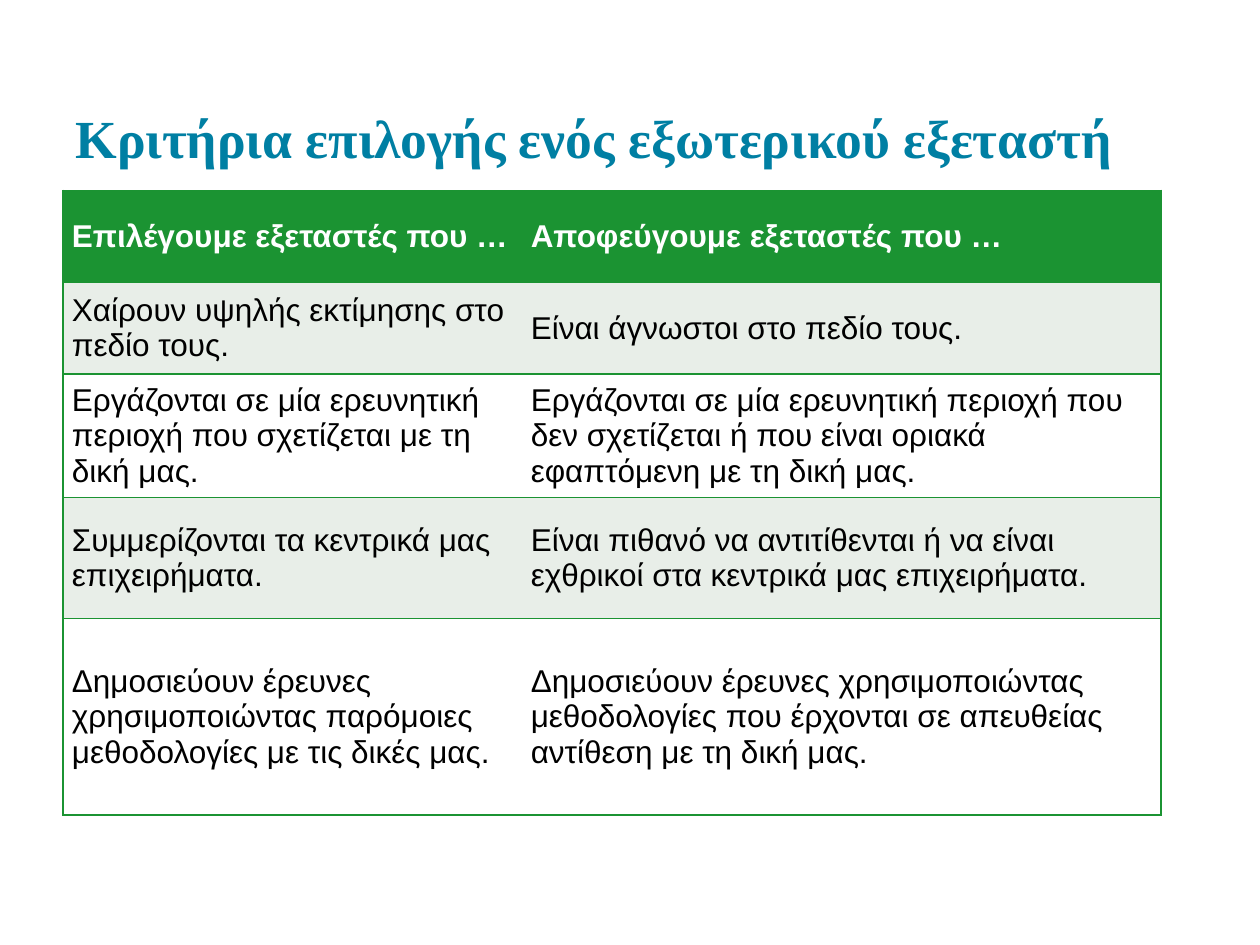
from lxml import etree
from pptx import Presentation
from pptx.dml.color import RGBColor
from pptx.enum.text import MSO_ANCHOR, MSO_AUTO_SIZE, PP_ALIGN
from pptx.oxml.ns import qn
from pptx.util import Cm, Pt

MIDDLE, BOTTOM = MSO_ANCHOR.MIDDLE, MSO_ANCHOR.BOTTOM
LEFT = PP_ALIGN.LEFT
NO_FIT = MSO_AUTO_SIZE.NONE
TITLE_ONLY = 5

GREEN, PALE, WHITE, BLACK, TEAL = "1B9332", "E8EEE8", "FFFFFF", "000000", "007FA3"
COLUMN_WIDTHS = [9.25, 12.88]
ROW_HEIGHTS = [1.85, 1.85, 2.49, 2.44, 3.96]
CRITERIA = [
    ("Επιλέγουμε εξεταστές που …", "Αποφεύγουμε εξεταστές που …"),
    ("Χαίρουν υψηλής εκτίμησης στο πεδίο τους.", "Είναι άγνωστοι στο πεδίο τους."),
    ("Εργάζονται σε μία ερευνητική περιοχή που σχετίζεται με τη δική μας.",
     "Εργάζονται σε μία ερευνητική περιοχή που δεν σχετίζεται ή που είναι οριακά "
     "εφαπτόμενη με τη δική μας."),
    ("Συμμερίζονται τα κεντρικά μας επιχειρήματα.",
     "Είναι πιθανό να αντιτίθενται ή να είναι εχθρικοί στα κεντρικά μας επιχειρήματα."),
    ("Δημοσιεύουν έρευνες χρησιμοποιώντας παρόμοιες μεθοδολογίες με τις δικές μας.",
     "Δημοσιεύουν έρευνες χρησιμοποιώντας μεθοδολογίες που έρχονται σε απευθείας "
     "αντίθεση με τη δική μας."),
]


def color(value):
    return RGBColor.from_string(value)


def apply(target, values):
    for name, value in values.items():
        setattr(target, name, value)


class SlideWriter:
    """Holds the style and the current slide and writes its elements."""

    def __init__(self, page):
        self.page = page
        self.title_font = {"name": "Times New Roman", "size": Pt(30.6), "bold": True}
        self.cell_font = {"name": "Arial", "size": Pt(18)}
        self.cell_format = {"vertical_anchor": MIDDLE, "margin_left": Cm(0.18),
                            "margin_right": Cm(0.18), "margin_top": 0, "margin_bottom": 0}

    def title(self, text, left, top, width, height):
        box = self.page.shapes.title
        apply(box, {"left": Cm(left), "top": Cm(top), "width": Cm(width), "height": Cm(height)})
        frame = box.text_frame
        sides = ("margin_left", "margin_top", "margin_right", "margin_bottom")
        apply(frame, {"text": text, "auto_size": NO_FIT, "word_wrap": True,
                      "vertical_anchor": BOTTOM} | dict.fromkeys(sides, Cm(0.25)))
        para = frame.paragraphs[0]
        para.alignment = LEFT
        span = para.runs[0]
        apply(span.font, self.title_font)
        span.font.color.rgb = color(TEAL)

    def border(self, cell, side, shown):
        properties = cell._tc.get_or_add_tcPr()
        line = etree.SubElement(properties, qn(f"a:ln{side}"), w=str(Pt(1)))
        if shown:
            fill = etree.SubElement(line, qn("a:solidFill"))
            etree.SubElement(fill, qn("a:srgbClr"), val=GREEN)
        else:
            etree.SubElement(line, qn("a:noFill"))

    def cell(self, cell, text, fill, ink, bold):
        apply(cell, self.cell_format)
        cell.fill.solid()
        cell.fill.fore_color.rgb = color(fill)
        cell.text = text
        para = cell.text_frame.paragraphs[0]
        apply(para, {"alignment": LEFT, "space_after": Pt(6)})
        span = para.runs[0]
        apply(span.font, self.cell_font | {"bold": bold})
        span.font.color.rgb = color(ink)

    def table(self, rows, left, top, widths, heights):
        frame = self.page.shapes.add_table(len(rows), len(widths), Cm(left), Cm(top),
                                           Cm(sum(widths)), Cm(sum(heights)))
        table = frame.table
        for column, width in zip(table.columns, widths):
            column.width = Cm(width)
        for index, (row, height) in enumerate(zip(rows, heights)):
            table.rows[index].height = Cm(height)
            header = index == 0
            fill = GREEN if header else (WHITE, PALE)[index % 2]
            for number, text in enumerate(row):
                cell = table.cell(index, number)
                shown = {"L": number == 0, "R": number == len(row) - 1, "T": True, "B": True}
                for side, visible in shown.items():
                    self.border(cell, side, visible)
                self.cell(cell, text, fill, WHITE if header else BLACK, header)


def main():
    deck = Presentation()
    apply(deck, {"slide_width": Cm(25.4), "slide_height": Cm(19.05)})
    writer = SlideWriter(deck.slides.add_slide(deck.slide_layouts[TITLE_ONLY]))
    writer.title("Κριτήρια επιλογής ενός εξωτερικού εξεταστή", 1.27, 0.61, 22.86, 3.05)
    writer.table(CRITERIA, 1.27, 3.84, COLUMN_WIDTHS, ROW_HEIGHTS)
    deck.save("out.pptx")


if __name__ == "__main__":
    main()
